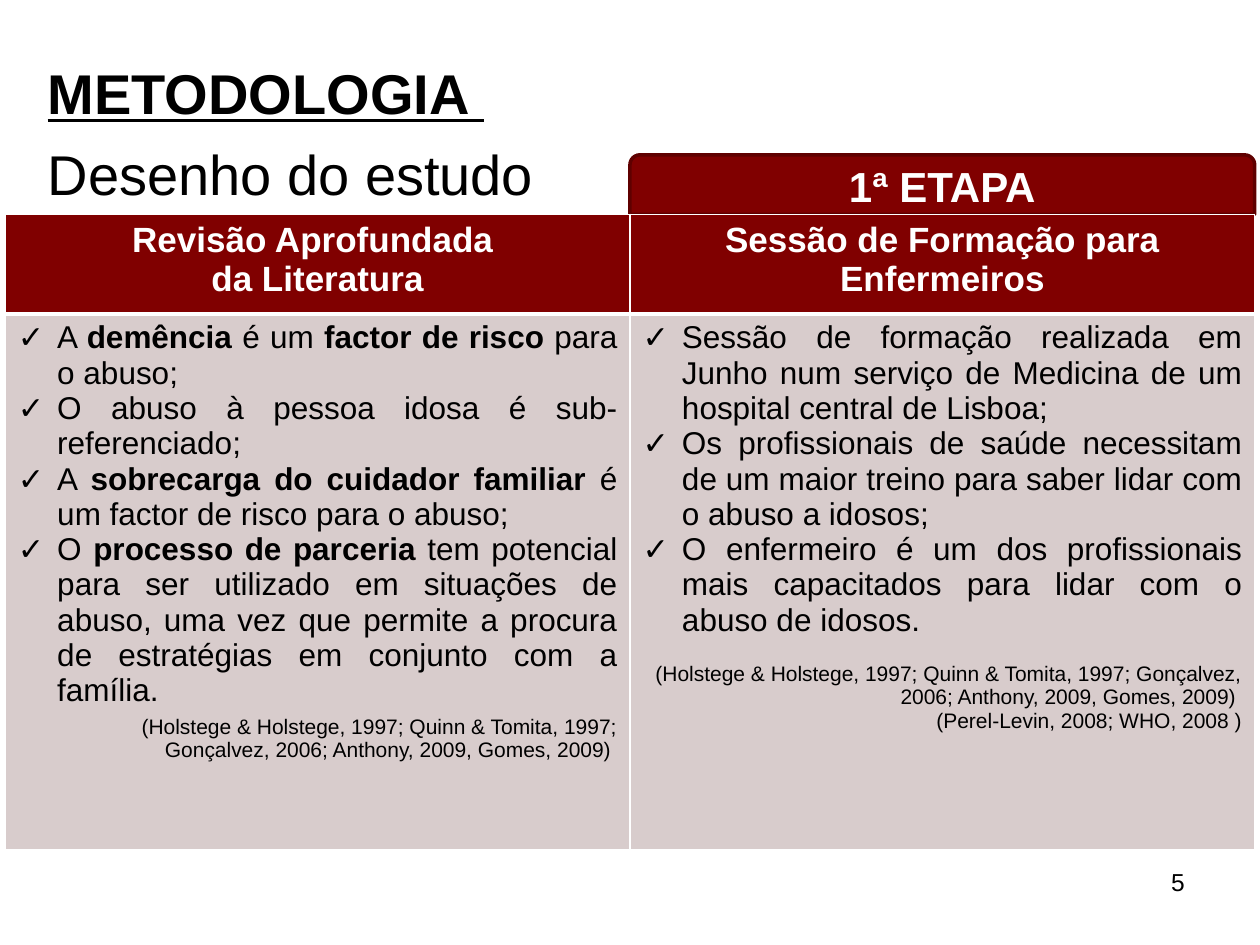
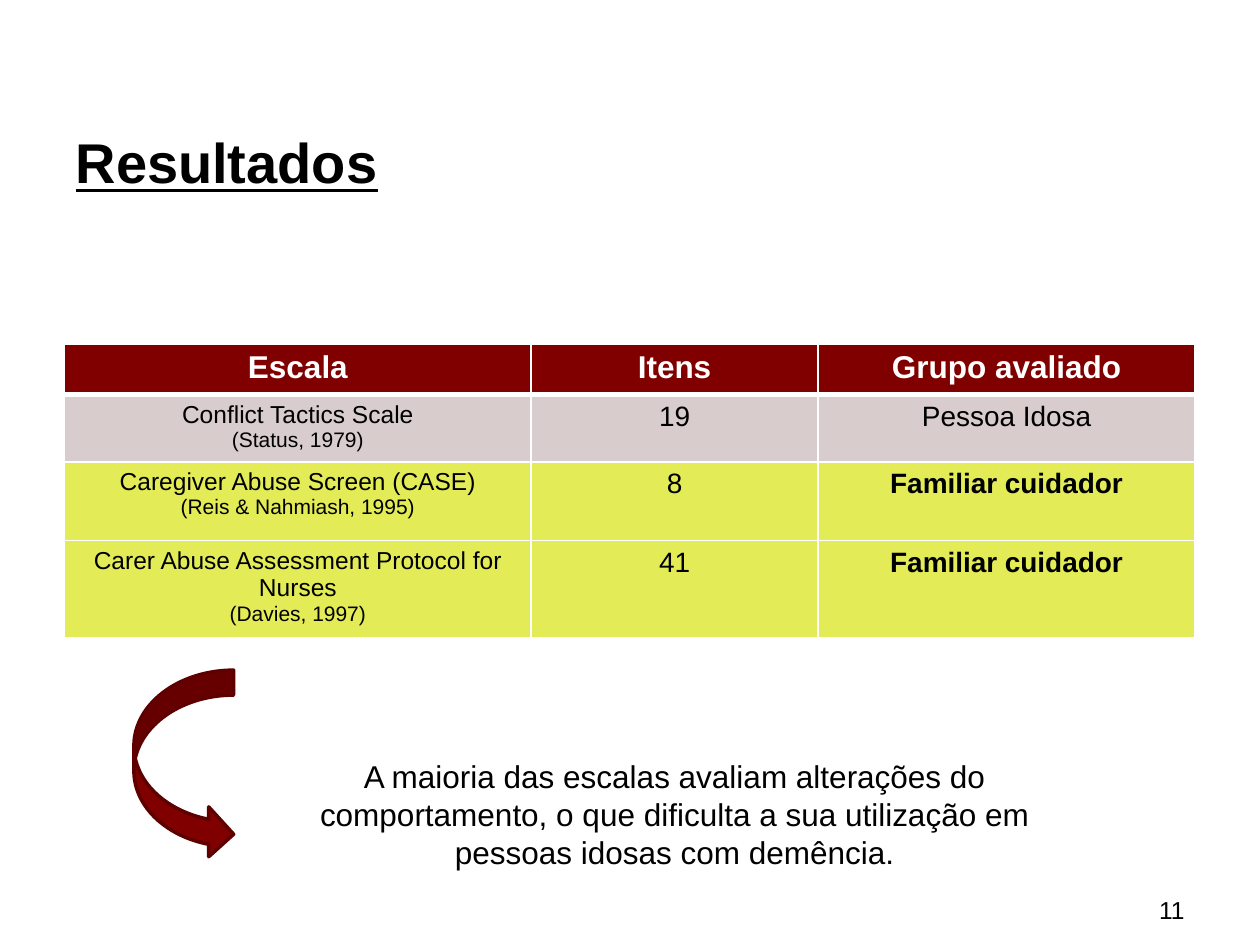
"""Builds two slides: study design (methodology) and results of the scale review."""
from lxml import etree
from pptx import Presentation
from pptx.dml.color import RGBColor
from pptx.enum import shapes, text
from pptx.oxml import ns
from pptx.util import Pt

MAROON = RGBColor(0x80, 0x00, 0x00)
DARK = RGBColor(0x5F, 0x00, 0x00)
GREY = RGBColor(0xD8, 0xCC, 0xCC)
LIME = RGBColor(0xE3, 0xEC, 0x57)
BLACK = RGBColor(0, 0, 0)
WHITE = RGBColor(255, 255, 255)
LEFT, CENTER, RIGHT, JUSTIFY = (text.PP_ALIGN.LEFT, text.PP_ALIGN.CENTER,
                                text.PP_ALIGN.RIGHT, text.PP_ALIGN.JUSTIFY)
HANG = Pt(22.5)


def write(p, content, size, color=BLACK, align=CENTER):
    """Fill a paragraph; parts between asterisks are bold."""
    p.alignment = align
    for i, part in enumerate(content.split("*")):
        if part:
            r = p.add_run()
            r.text = part
            r.font.name, r.font.size = "Arial", Pt(size)
            r.font.bold = i % 2 == 1
            r.font.color.rgb = color


def format_cell(cell, row, fill):
    """Set the fill and the white borders, thick under the header row."""
    cell.fill.solid()
    cell.fill.fore_color.rgb = fill
    tcPr = cell._tc.get_or_add_tcPr()
    widths = {"lnL": 1, "lnR": 1, "lnT": 3 if row == 1 else 1, "lnB": 3 if row == 0 else 1}
    for i, (tag, width) in enumerate(widths.items()):
        ln = etree.Element(ns.qn("a:" + tag), w=str(Pt(width)))
        solid = etree.SubElement(ln, ns.qn("a:solidFill"))
        etree.SubElement(solid, ns.qn("a:srgbClr"), val=str(WHITE))
        tcPr.insert(i, ln)


prs = Presentation()
prs.slide_width, prs.slide_height = Pt(720), Pt(540)

pages = [
    (["*METODOLOGIA *", "Desenho do estudo"], (20, 30, 648, 96), "5", 492),
    (["*Resultados*"], (36, 69.5, 648, 60), "11", 508),
]
for lines, box, number, number_top in pages:
    s = prs.slides.add_slide(prs.slide_layouts[5])
    sp = s.shapes.title
    sp.left, sp.top, sp.width, sp.height = [Pt(v) for v in box]
    tf = sp.text_frame
    tf.auto_size = text.MSO_AUTO_SIZE.NONE
    tf.vertical_anchor = text.MSO_ANCHOR.TOP
    for i, line in enumerate(lines):
        p = tf.add_paragraph() if i else tf.paragraphs[0]
        p.space_before = Pt(7.7 if i else 0)
        write(p, line, 32, align=LEFT)
    for r in tf.paragraphs[0].runs:
        r.font.underline = True
    sp = s.shapes.add_textbox(Pt(516), Pt(number_top), Pt(168), Pt(37))
    sp.text_frame.word_wrap = True
    write(sp.text_frame.paragraphs[0], number, 14, align=RIGHT)

design, results = prs.slides

sp = design.shapes.add_shape(shapes.MSO_SHAPE.ROUND_2_SAME_RECTANGLE,
                             Pt(360), Pt(88.5), Pt(357), Pt(34))
sp.shadow.inherit = False
sp.fill.solid()
sp.fill.fore_color.rgb = MAROON
sp.line.color.rgb, sp.line.width = DARK, Pt(2)
sp.text_frame.vertical_anchor = text.MSO_ANCHOR.MIDDLE
write(sp.text_frame.paragraphs[0], "*1ª ETAPA*", 24, WHITE)

REFERENCES = ("(Holstege & Holstege, 1997; Quinn & Tomita, 1997; "
              "Gonçalvez, 2006; Anthony, 2009, Gomes, 2009) ")
columns = [
    (["*Revisão Aprofundada *", "*da Literatura*"],
     ["A *demência *é um *factor de risco *para o abuso;",
      "O abuso à pessoa idosa é sub-referenciado;",
      "A *sobrecarga do cuidador familiar *é um factor de risco para o abuso;",
      "O *processo de parceria *tem potencial para ser utilizado em situações de abuso, "
      "uma vez que permite a procura de estratégias em conjunto com a família."],
     [(REFERENCES, 4, 0)]),
    (["*Sessão de Formação para Enfermeiros*"],
     ["Sessão de formação realizada em Junho num serviço de Medicina de um hospital "
      "central de Lisboa;",
      "Os profissionais de saúde necessitam de um maior treino para saber lidar com o "
      "abuso a idosos;",
      "O enfermeiro é um dos profissionais mais capacitados para lidar com o abuso de idosos."],
     [(REFERENCES, 13.8, -HANG), ("(Perel-Levin, 2008; WHO, 2008 )", 0, -HANG)]),
]
table = design.shapes.add_table(2, 2, Pt(3), Pt(122.5), Pt(714), Pt(363)).table
table.rows[0].height, table.rows[1].height = Pt(57), Pt(306)
for c, (heading, points, references) in enumerate(columns):
    table.columns[c].width = Pt(357)
    head, body = table.cell(0, c), table.cell(1, c)
    format_cell(head, 0, MAROON)
    format_cell(body, 1, GREY)
    for i, line in enumerate(heading):
        tf = head.text_frame
        write(tf.add_paragraph() if i else tf.paragraphs[0], line, 20, WHITE)
    tf = body.text_frame
    for i, point in enumerate(points):
        p = tf.add_paragraph() if i else tf.paragraphs[0]
        pPr = p._p.get_or_add_pPr()
        pPr.set("marL", str(HANG))
        pPr.set("indent", str(-HANG))
        etree.SubElement(pPr, ns.qn("a:buFont"), typeface="Arial")
        etree.SubElement(pPr, ns.qn("a:buChar"), char="✓")
        write(p, point, 18, align=JUSTIFY)
    for reference, gap, indent in references:
        p = tf.add_paragraph()
        pPr = p._p.get_or_add_pPr()
        pPr.set("marL", str(HANG))
        pPr.set("indent", str(indent))
        p.space_before = Pt(gap)
        write(p, reference, 12, align=RIGHT)

rows = [
    (29, MAROON, WHITE, [[("*Escala*", 18)], [("*Itens*", 18)], [("*Grupo avaliado*", 18)]]),
    (36, GREY, BLACK, [[("Conflict Tactics Scale", 14), ("(Status, 1979)", 12)],
                       [("19", 16)], [("Pessoa Idosa", 16)]]),
    (45, LIME, BLACK, [[("Caregiver Abuse Screen (CASE)", 14), ("(Reis & Nahmiash, 1995)", 12)],
                       [("8", 16)], [("*Familiar cuidador*", 16)]]),
    (52, LIME, BLACK, [[("Carer Abuse Assessment Protocol for Nurses", 14),
                        ("(Davies, 1997)", 12)],
                       [("41", 16)], [("*Familiar cuidador*", 16)]]),
]
table = results.shapes.add_table(4, 3, Pt(37), Pt(196.5), Pt(646), Pt(162)).table
for c, width in enumerate([266.5, 164, 215.5]):
    table.columns[c].width = Pt(width)
for i, (height, fill, color, cells) in enumerate(rows):
    table.rows[i].height = Pt(height)
    for c, lines in enumerate(cells):
        cell = table.cell(i, c)
        format_cell(cell, i, fill)
        for n, (line, size) in enumerate(lines):
            tf = cell.text_frame
            write(tf.add_paragraph() if n else tf.paragraphs[0], line, size, color)

sp = results.shapes.add_shape(shapes.MSO_SHAPE.CURVED_RIGHT_ARROW,
                              Pt(76.5), Pt(383), Pt(57), Pt(108))
sp.shadow.inherit = False
sp.fill.solid()
sp.fill.fore_color.rgb = MAROON
sp.line.color.rgb, sp.line.width = DARK, Pt(2)

sp = results.shapes.add_textbox(Pt(161.5), Pt(429), Pt(448), Pt(73))
sp.text_frame.word_wrap = True
write(sp.text_frame.paragraphs[0],
      "A maioria das escalas avaliam alterações do comportamento, o que dificulta a sua "
      "utilização em pessoas idosas com demência.", 18)

prs.save("out.pptx")
